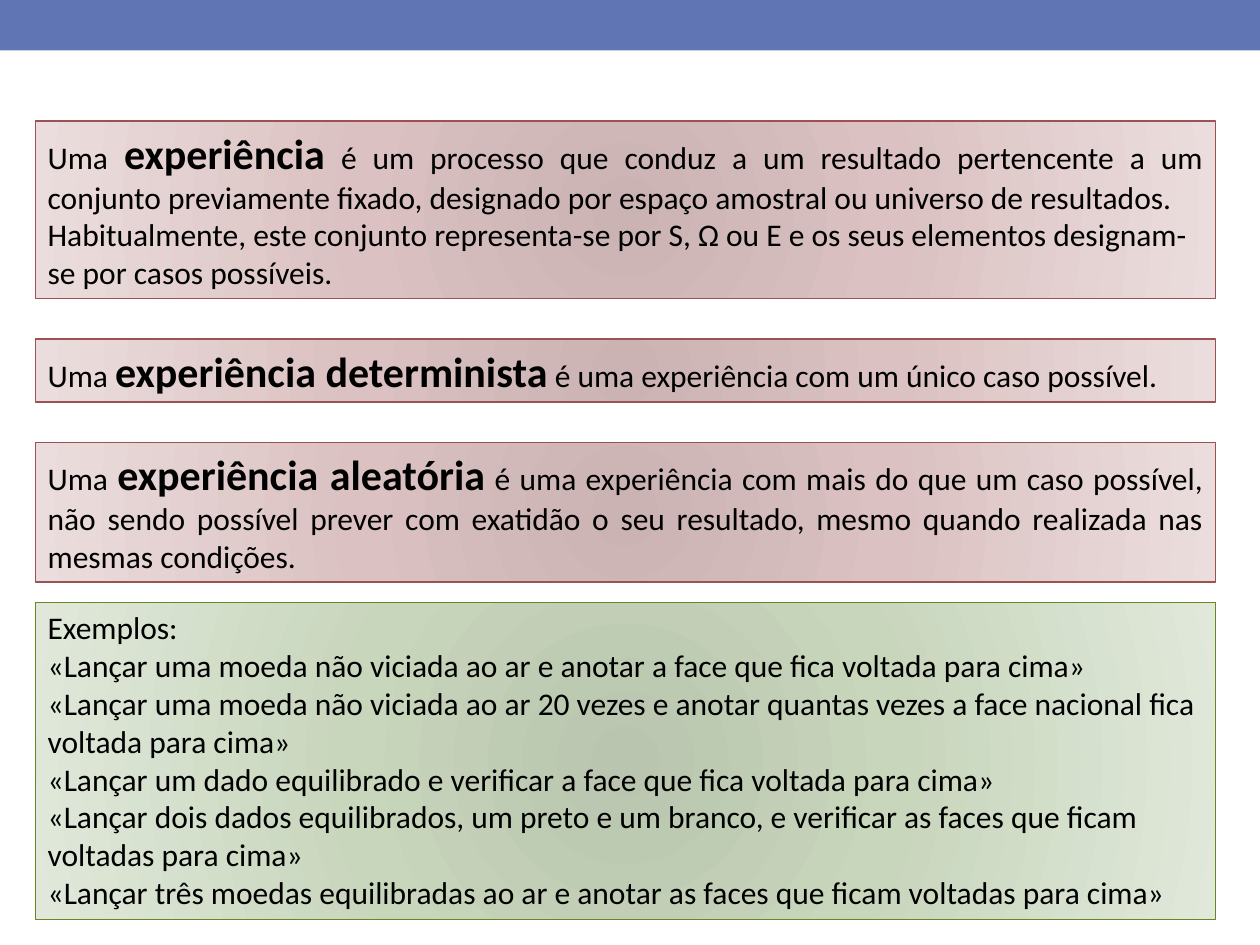
from pptx import Presentation
from pptx.dml.color import RGBColor as Rgb
from pptx.enum.shapes import MSO_SHAPE as Shape
from pptx.enum.text import MSO_ANCHOR as Anchor, MSO_AUTO_SIZE as AutoSize, PP_ALIGN as Align
from pptx.oxml import parse_xml
from pptx.oxml.ns import nsdecls
from pptx.util import Inches, Pt

THEME = {
    "font": "Calibri",
    "text": "000000",
    "band": "6076B4",
    "body": {"size": Pt(18), "bold": False},
    "term": {"size": Pt(24), "bold": True},
    "outline": Pt(0.75),
    "definition": {"stops": ("CBB3B3", "DBC1C1", "EBDDDD"), "line": "9C5252"},
    "examples": {"stops": ("B9C5AE", "C8D6BC", "E1E8DB"), "line": "63891F"},
}
STOP_SHARES = (0, 45, 100)

PANELS = [
    {"look": "definition", "height": 1.41, "gap": 0.32, "paragraphs": [
        (Align.JUSTIFY, [
            ("body", "Uma "), ("term", "experiência"),
            ("body", " é um processo que conduz a um resultado pertencente a um conjunto "
                     "previamente fixado, designado por espaço amostral ou universo de resultados.")]),
        (Align.LEFT, [
            ("body", "Habitualmente, este conjunto representa-se por S, Ω ou E e os seus "
                     "elementos designam-se por casos possíveis.")]),
    ]},
    {"look": "definition", "height": 0.5, "gap": 0.32, "paragraphs": [
        (Align.JUSTIFY, [
            ("body", "Uma "), ("term", "experiência determinista"),
            ("body", " é uma experiência com um único caso possível.")]),
    ]},
    {"look": "definition", "height": 1.11, "gap": 0.16, "paragraphs": [
        (Align.JUSTIFY, [
            ("body", "Uma "), ("term", "experiência aleatória"),
            ("body", " é uma experiência com mais do que um caso possível, não sendo possível "
                     "prever com exatidão o seu resultado, mesmo quando realizada nas mesmas "
                     "condições.")]),
    ]},
    {"look": "examples", "height": 2.52, "gap": 0, "paragraphs": [
        (Align.LEFT, [("body", line)]) for line in (
            "Exemplos:",
            "«Lançar uma moeda não viciada ao ar e anotar a face que fica voltada para cima»",
            "«Lançar uma moeda não viciada ao ar 20 vezes e anotar quantas vezes a face nacional "
            "fica voltada para cima»",
            "«Lançar um dado equilibrado e verificar a face que fica voltada para cima»",
            "«Lançar dois dados equilibrados, um preto e um branco, e verificar as faces que "
            "ficam voltadas para cima»",
            "«Lançar três moedas equilibradas ao ar e anotar as faces que ficam voltadas para cima»",
        )
    ]},
]

SLIDE_WIDTH, SLIDE_HEIGHT = 10, 7.5
BAND_HEIGHT = 0.4
PANEL_LEFT, PANEL_WIDTH, FIRST_TOP = 0.28, 9.37, 0.96


def apply(target, values):
    for name, value in values.items():
        setattr(target, name, value)


def add_box(slide, left, top, width, height):
    box = slide.shapes.add_shape(
        Shape.RECTANGLE, Inches(left), Inches(top), Inches(width), Inches(height))
    box.shadow.inherit = False
    return box


def fill_radially(box, colours):
    stops = "".join(
        f'<a:gs pos="{share * 1000}"><a:srgbClr val="{colour}"/></a:gs>'
        for share, colour in zip(STOP_SHARES, colours))
    gradient = parse_xml(
        f'<a:gradFill {nsdecls("a")} rotWithShape="1"><a:gsLst>{stops}</a:gsLst>'
        '<a:path path="circle"><a:fillToRect l="100000" t="100000" r="100000" b="100000"/>'
        '</a:path></a:gradFill>')
    box._element.spPr.prstGeom.addnext(gradient)


def write_paragraphs(frame, paragraphs):
    apply(frame, {"word_wrap": True, "auto_size": AutoSize.SHAPE_TO_FIT_TEXT,
                  "vertical_anchor": Anchor.TOP})
    for index, (alignment, pieces) in enumerate(paragraphs):
        paragraph = frame.add_paragraph() if index else frame.paragraphs[0]
        paragraph.alignment = alignment
        for style, words in pieces:
            run = paragraph.add_run()
            run.text = words
            apply(run.font, {"name": THEME["font"], **THEME[style]})
            run.font.color.rgb = Rgb.from_string(THEME["text"])


def add_panel(slide, top, panel):
    look = THEME[panel["look"]]
    box = add_box(slide, PANEL_LEFT, top, PANEL_WIDTH, panel["height"])
    fill_radially(box, look["stops"])
    box.line.color.rgb = Rgb.from_string(look["line"])
    box.line.width = THEME["outline"]
    write_paragraphs(box.text_frame, panel["paragraphs"])


def main():
    deck = Presentation()
    apply(deck, {"slide_width": Inches(SLIDE_WIDTH), "slide_height": Inches(SLIDE_HEIGHT)})
    slide = deck.slides.add_slide(deck.slide_layouts[6])

    band = add_box(slide, 0, 0, SLIDE_WIDTH, BAND_HEIGHT)
    band.fill.solid()
    band.fill.fore_color.rgb = Rgb.from_string(THEME["band"])
    band.line.fill.background()

    top = FIRST_TOP
    for panel in PANELS:
        add_panel(slide, top, panel)
        top += panel["height"] + panel["gap"]

    deck.save("out.pptx")


if __name__ == "__main__":
    main()
